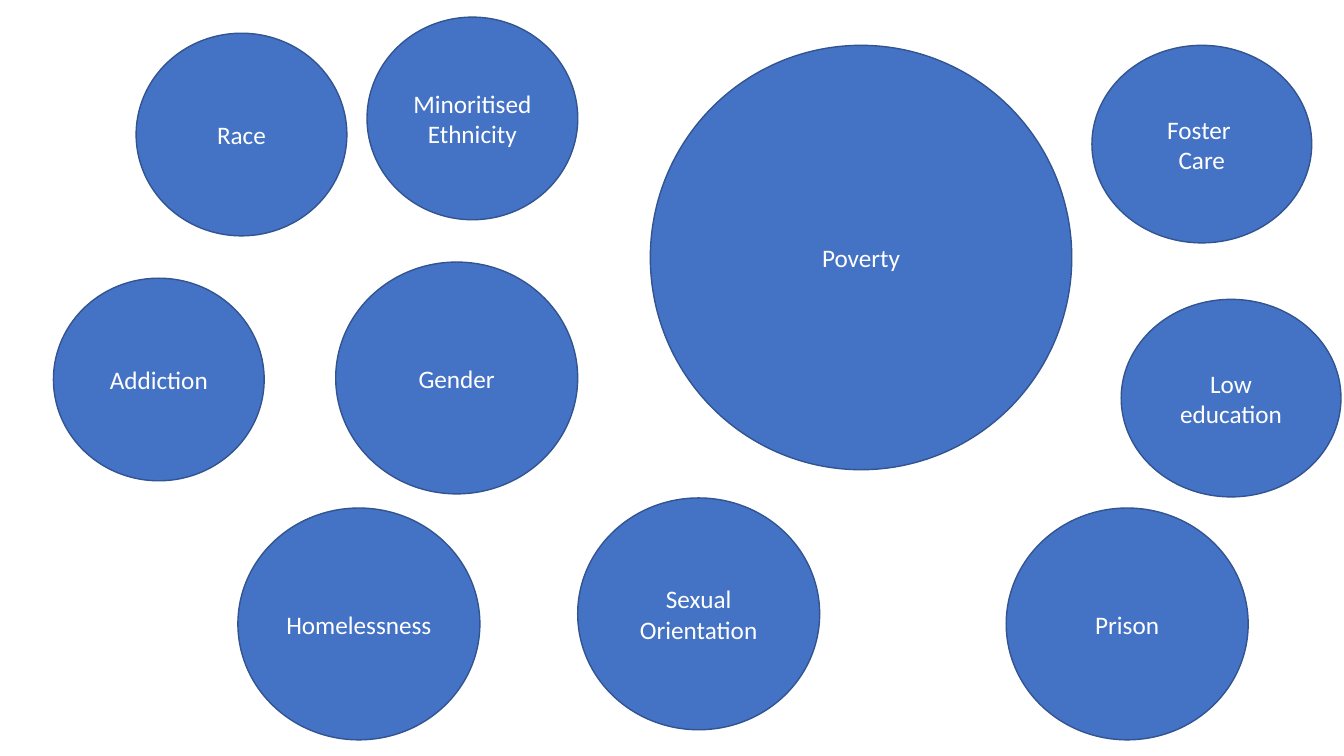
from dataclasses import dataclass

import pptx
import pptx.dml.color
import pptx.enum.shapes
import pptx.enum.text
import pptx.slide
import pptx.util

EMU_PER_PX = 9144  # 100 px to the inch
COLOURS = {"fill": "4472C4", "outline": "325491", "text": "FFFFFF"}

# Circle sizes (width, height) in px
DOMINANT = (418, 421)
LARGE = (240, 230)
MEDIUM = (209, 201)
WIDE = (218, 196)


@dataclass(frozen=True)
class Factor:
    label: str  # \n starts a paragraph, \v breaks a line
    left: int
    top: int
    size: tuple[int, int]


FACTORS = [
    Factor("Poverty", 645, 45, DOMINANT),
    Factor("Race", 135, 33, MEDIUM),
    Factor("Addiction", 53, 276, MEDIUM),
    Factor("Homelessness", 236, 504, LARGE),
    Factor("Gender", 333, 260, LARGE),
    Factor("Sexual Orientation", 573, 494, LARGE),
    Factor("Prison", 998, 504, LARGE),
    Factor("Foster \nCare", 1083, 45, WIDE),
    Factor("Low education", 1112, 297, WIDE),
    Factor("Minoritised\vEthnicity", 364, 17, MEDIUM),
]


def px(length: int) -> pptx.util.Emu:
    return pptx.util.Emu(length * EMU_PER_PX)


def colour(name: str) -> pptx.dml.color.RGBColor:
    return pptx.dml.color.RGBColor.from_string(COLOURS[name])


def draw_factor(slide: pptx.slide.Slide, factor: Factor) -> None:
    width, height = factor.size
    circle = slide.shapes.add_shape(
        pptx.enum.shapes.MSO_SHAPE.OVAL,
        px(factor.left), px(factor.top), px(width), px(height),
    )
    circle.shadow.inherit = False
    circle.fill.solid()
    circle.fill.fore_color.rgb = colour("fill")
    circle.line.color.rgb = colour("outline")
    circle.line.width = pptx.util.Pt(1)

    # Centred label
    label = circle.text_frame
    label.text = factor.label
    label.word_wrap = True
    label.vertical_anchor = pptx.enum.text.MSO_ANCHOR.MIDDLE
    for paragraph in label.paragraphs:
        paragraph.alignment = pptx.enum.text.PP_ALIGN.CENTER
        paragraph.font.name = "Calibri"
        paragraph.font.size = pptx.util.Pt(18)
        paragraph.font.color.rgb = colour("text")


def main() -> None:
    presentation = pptx.Presentation()
    presentation.slide_width = px(1333)
    presentation.slide_height = px(750)
    slide = presentation.slides.add_slide(presentation.slide_layouts[6])

    # Circles from back to front
    for factor in FACTORS:
        draw_factor(slide, factor)

    presentation.save("out.pptx")


if __name__ == "__main__":
    main()
